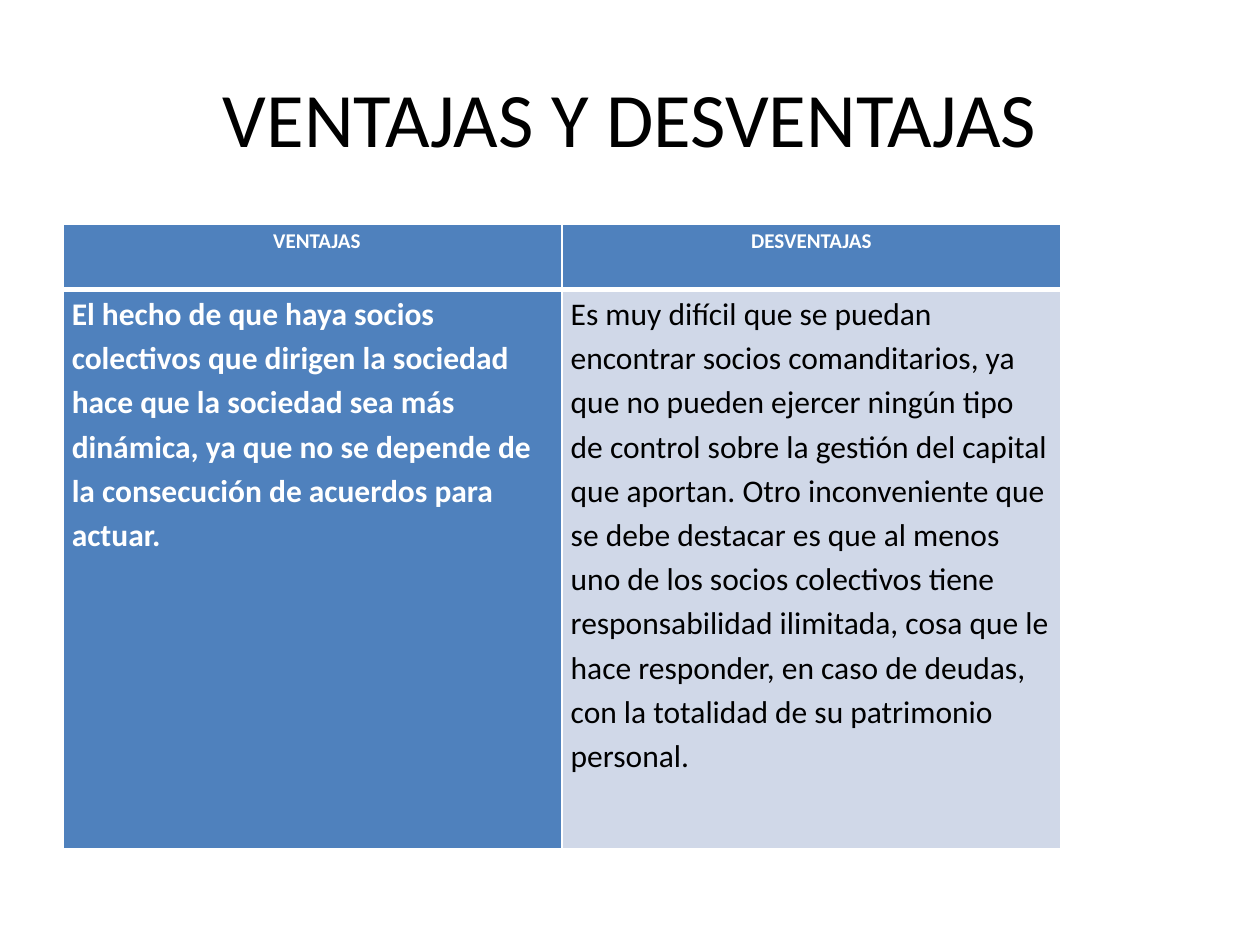
from dataclasses import dataclass

from lxml.etree import SubElement
from pptx import Presentation
from pptx.dml.color import RGBColor
from pptx.enum.text import MSO_ANCHOR, PP_ALIGN as Align
from pptx.oxml.ns import qn
from pptx.util import Inches, Pt

COLORS = {"white": "FFFFFF", "black": "000000", "blue": "4F81BD", "pale": "D0D8E8"}
FONT = "Calibri"
SIDE_MARGIN = 0.07


@dataclass
class Entry:
    text: str
    size: int
    fill: str = "blue"
    color: str = "white"
    bold: bool = True
    align: Align = Align.LEFT
    left_margin: float = SIDE_MARGIN


ROWS = [
    [
        Entry("VENTAJAS", 12, align=Align.CENTER, left_margin=2 * SIDE_MARGIN),
        Entry("DESVENTAJAS", 12, align=Align.CENTER),
    ],
    [
        Entry(
            "El hecho de que haya socios colectivos que dirigen la sociedad hace que "
            "la sociedad sea más dinámica, ya que no se depende de la consecución de "
            "acuerdos para actuar.",
            18,
        ),
        Entry(
            "Es muy difícil que se puedan encontrar socios comanditarios, ya que no "
            "pueden ejercer ningún tipo de control sobre la gestión del capital que "
            "aportan. Otro inconveniente que se debe destacar es que al menos uno de "
            "los socios colectivos tiene responsabilidad ilimitada, cosa que le hace "
            "responder, en caso de deudas, con la totalidad de su patrimonio personal.",
            18, fill="pale", color="black", bold=False,
        ),
    ],
]
COLUMN_WIDTH = 3.96
ROW_HEIGHTS = [0.52, 4.44]


def write(paragraph, text: str, size: int, color: str, bold: bool, align: Align) -> None:
    paragraph.alignment = align
    run = paragraph.add_run()
    run.text = text
    for attribute, value in {"name": FONT, "size": Pt(size), "bold": bold}.items():
        setattr(run.font, attribute, value)
    run.font.color.rgb = RGBColor.from_string(COLORS[color])


def add_borders(cell, widths: dict[str, int]) -> None:
    """Draw white borders; they must precede the fill in the cell properties."""
    properties = cell._tc.get_or_add_tcPr()
    for side, width in widths.items():
        line = SubElement(properties, qn(f"a:ln{side}"), w=str(Pt(width)))
        fill = SubElement(line, qn("a:solidFill"))
        SubElement(fill, qn("a:srgbClr"), val=COLORS["white"])


def fill_cell(cell, entry: Entry, borders: dict[str, int]) -> None:
    add_borders(cell, borders)
    cell.fill.solid()
    cell.fill.fore_color.rgb = RGBColor.from_string(COLORS[entry.fill])
    margins = {
        "margin_left": Inches(entry.left_margin),
        "margin_right": Inches(SIDE_MARGIN),
        "margin_top": 0,
        "margin_bottom": 0,
    }
    for attribute, value in margins.items():
        setattr(cell, attribute, value)
    paragraph = cell.text_frame.paragraphs[0]
    paragraph.line_spacing = 1.15
    paragraph.space_after = Pt(10)
    write(paragraph, entry.text, entry.size, entry.color, entry.bold, entry.align)


def add_title(slide) -> None:
    box = slide.shapes.add_textbox(Inches(0.5), Inches(0.3), Inches(9), Inches(1.25))
    frame = box.text_frame
    frame.word_wrap = True
    frame.vertical_anchor = MSO_ANCHOR.MIDDLE
    write(frame.paragraphs[0], "VENTAJAS Y DESVENTAJAS", 44, "black", False, Align.CENTER)


def add_comparison(slide) -> None:
    table = slide.shapes.add_table(
        len(ROWS), len(ROWS[0]), Inches(0.5), Inches(1.78),
        Inches(COLUMN_WIDTH * len(ROWS[0])), Inches(sum(ROW_HEIGHTS)),
    ).table
    for column in table.columns:
        column.width = Inches(COLUMN_WIDTH)
    for row_index, (entries, height) in enumerate(zip(ROWS, ROW_HEIGHTS)):
        table.rows[row_index].height = Inches(height)
        is_header = row_index == 0
        borders = {"L": 1, "R": 1, "T": 1 if is_header else 3, "B": 3 if is_header else 1}
        for column_index, entry in enumerate(entries):
            fill_cell(table.cell(row_index, column_index), entry, borders)


def main() -> None:
    presentation = Presentation()
    presentation.slide_width = Inches(10)
    presentation.slide_height = Inches(7.5)
    slide = presentation.slides.add_slide(presentation.slide_layouts[6])
    add_title(slide)
    add_comparison(slide)
    presentation.save("out.pptx")


if __name__ == "__main__":
    main()
